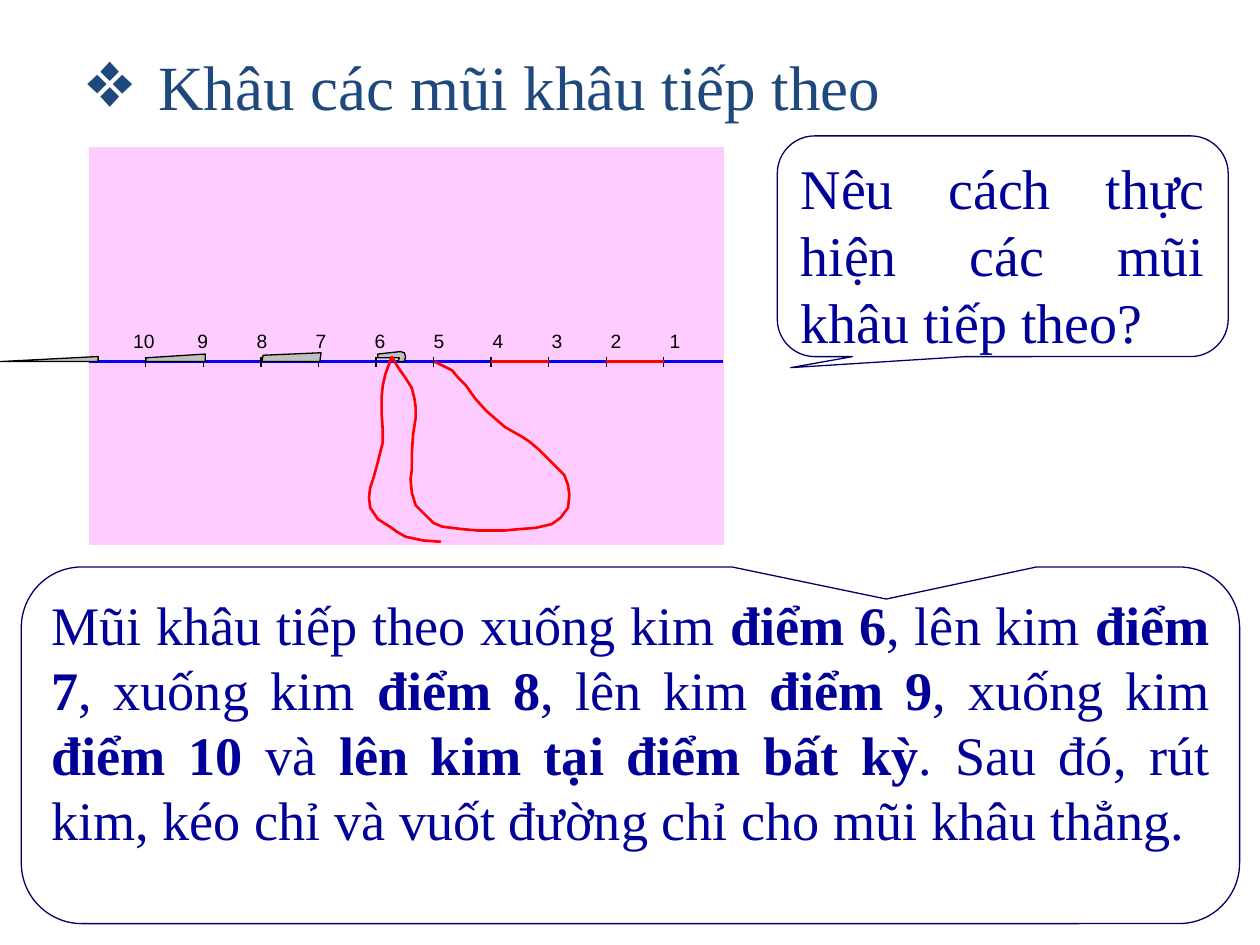
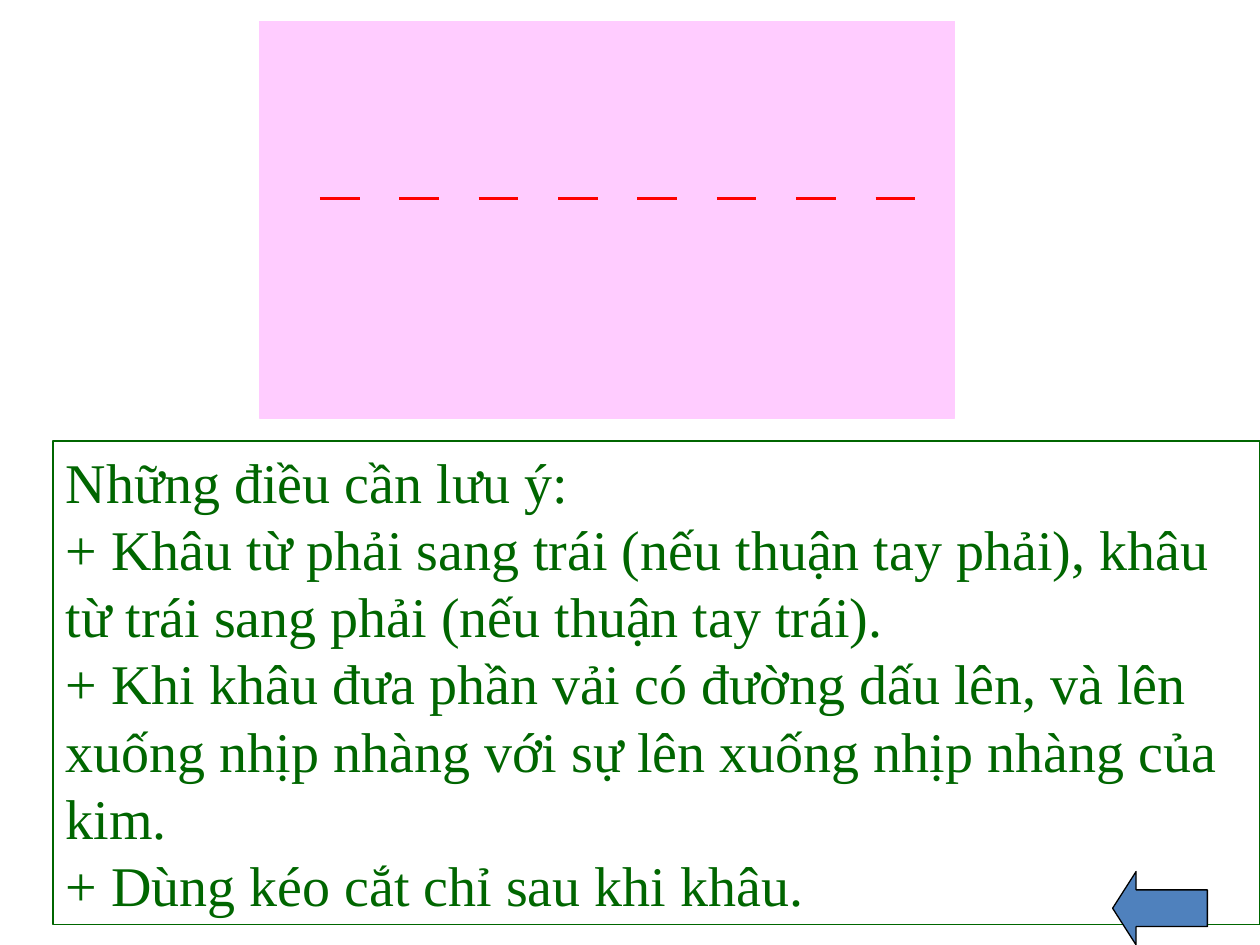
from lxml import etree
from pptx import Presentation
from pptx.dml.color import RGBColor
from pptx.enum.shapes import MSO_CONNECTOR, MSO_SHAPE
from pptx.enum.text import MSO_ANCHOR, MSO_AUTO_SIZE, PP_ALIGN
from pptx.oxml.ns import qn
from pptx.util import Cm, Pt

RECT = MSO_SHAPE.RECTANGLE
BUBBLE = MSO_SHAPE.ROUNDED_RECTANGULAR_CALLOUT
ARROW = MSO_SHAPE.LEFT_ARROW
LINE = MSO_CONNECTOR.STRAIGHT
TOP = MSO_ANCHOR.TOP
FIXED = MSO_AUTO_SIZE.NONE
LEFT = PP_ALIGN.LEFT
FULL = PP_ALIGN.JUSTIFY

SERIF, SANS = "Times New Roman", "Arial"
PINK, WHITE, BLACK, GREY = "FFCCFF", "FFFFFF", "000000", "C0C0C0"
RED, BLUE, NAVY, INK = "FF0000", "0000FF", "000066", "000099"
GREEN, STEEL, TITLE = "006600", "4F81BD", "1F497D"

UNIT = Cm(2.54) / 100
SEAM, FIRST, STEP = 4.32, 1.14, 1.16

NEEDLE = [
    [(7, 0), (-71, 0), (7, -4)],
    [(92, 0), (45, 0), (45, -3), (92, -6)],
    [(183, 0), (137, 0), (138, -5), (184, -7)],
    [(229, -3), (229, -6), (247, -8), (250, -7), (251, -4), (250, 0),
     (245, 0), (246, -3)],
]
THREAD = [
    [(240, -4), (238, 2), (235, 10), (233, 19), (232, 28), (232, 41),
     (233, 55), (233, 64), (231, 72), (229, 80), (226, 91), (223, 100),
     (222, 108), (223, 116), (229, 125), (240, 132), (244, 135),
     (251, 139), (265, 142), (279, 143)],
    [(240, -4), (246, 6), (251, 13), (256, 21), (258, 29), (259, 36),
     (259, 45), (257, 58), (256, 73), (256, 86), (255, 93), (256, 104),
     (259, 114), (264, 119), (273, 128), (280, 131), (296, 133),
     (308, 134), (330, 134), (341, 133), (354, 132), (367, 129),
     (374, 124), (380, 116), (381, 106), (380, 98), (377, 90), (372, 85),
     (364, 77), (357, 70), (350, 64), (344, 60), (330, 52), (315, 39),
     (306, 29), (299, 19), (293, 13), (288, 7), (274, 0)],
]

ASK = "Nêu cách thực hiện các mũi khâu tiếp theo?"
REPLY = (
    "Mũi khâu tiếp theo xuống kim *điểm 6*, lên kim *điểm 7*, xuống kim "
    "*điểm 8*, lên kim *điểm 9*, xuống kim *điểm 10* và *lên kim tại điểm "
    "bất kỳ*. Sau đó, rút kim, kéo chỉ và vuốt đường chỉ cho mũi khâu thẳng."
)
NOTES = [
    "Những điều cần lưu ý:",
    "+ Khâu từ phải sang trái (nếu thuận tay phải), khâu từ trái sang phải "
    "(nếu thuận tay trái).",
    "+ Khi khâu đưa phần vải có đường dấu lên, và lên xuống nhịp nhàng với "
    "sự lên xuống nhịp nhàng của kim.",
    "+ Dùng kéo cắt chỉ sau khi khâu.",
]


def color(code):
    return RGBColor.from_string(code)


def paint(shape, fill, line, width=0.75):
    shape.shadow.inherit = False
    if fill:
        shape.fill.solid()
        shape.fill.fore_color.rgb = color(fill)
    else:
        shape.fill.background()
    shape.line.color.rgb = color(line)
    shape.line.width = Pt(width)


def style(par, size, code, font=SERIF, align=LEFT):
    par.alignment = align
    for run in par.runs:
        run.font.size = Pt(size)
        run.font.name = font
        run.font.color.rgb = color(code)


def place(shape, box):
    shape.left, shape.top, shape.width, shape.height = map(Cm, box)


def setup(shape):
    frame = shape.text_frame
    frame.word_wrap = True
    frame.auto_size = FIXED
    frame.vertical_anchor = TOP
    return frame


def block(shapes, kind, box, fill, line):
    shape = shapes.add_shape(kind, *map(Cm, box))
    paint(shape, fill, line)
    return shape


def stroke(shapes, ends, code, width):
    line = shapes.add_connector(LINE, *map(Cm, ends))
    line.line.color.rgb = color(code)
    line.line.width = Pt(width)
    etree.SubElement(line.element.spPr, qn("a:effectLst"))


def trace(shapes, points, left, top, closed, fill, line, width):
    pen = shapes.build_freeform(*points[0], scale=UNIT)
    pen.add_line_segments(points[1:], close=closed)
    paint(pen.convert_to_shape(Cm(left), Cm(top)), fill, line, width)


def cloth(slide, box):
    shapes = slide.shapes.add_group_shape().shapes
    return shapes, block(shapes, RECT, box, PINK, PINK)


def label(panel):
    frame = setup(panel)
    frame.margin_left = frame.margin_right = 0
    frame.margin_top = Cm(3.66)
    par = frame.paragraphs[0]
    par.text = "".join(f"\t{num}" for num in range(10, 0, -1))
    style(par, 11, BLACK, SANS)
    tabs = etree.SubElement(par._p.get_or_add_pPr(), qn("a:tabLst"))
    for num in range(10):
        spot = Cm(1.1 + num * 1.19)
        etree.SubElement(tabs, qn("a:tab"), pos=str(spot), algn="ctr")


def seam(slide, box):
    shapes, panel = cloth(slide, box)
    label(panel)
    left, top, width, _ = box
    y = top + SEAM
    stroke(shapes, (left, y, left + width, y), BLUE, 1.5)
    ticks = [left + FIRST + num * STEP for num in range(10)]
    for x in ticks:
        stroke(shapes, (x, y + 0.1, x, y - 0.1), BLACK, 0.75)
    for part in NEEDLE:
        trace(shapes, part, left, y, True, GREY, BLACK, 0.75)
    for num in (8, 6):
        stroke(shapes, (ticks[num + 1], y, ticks[num], y), RED, 1.5)
    for loop in THREAD:
        trace(shapes, loop, left, y, False, None, RED, 1.5)


def dashes(slide, box):
    shapes, _ = cloth(slide, box)
    y = box[1] + 3.58
    for num in range(8):
        x = box[0] + 1.22 + num * 1.6
        stroke(shapes, (x, y, x + 0.8, y), RED, 1.75)


def bubble(slide, box, tip, text, size):
    shape = block(slide.shapes, BUBBLE, box, WHITE, NAVY)
    for num, value in enumerate(tip):
        shape.adjustments[num] = value
    par = setup(shape).paragraphs[0]
    for num, piece in enumerate(text.split("*")):
        run = par.add_run()
        run.text = piece
        run.font.bold = num % 2 == 1
    style(par, size, INK, align=FULL)


def head(slide, box, text):
    shape = slide.shapes.title
    place(shape, box)
    par = setup(shape).paragraphs[0]
    par.text = text
    style(par, 36, TITLE)
    props = par._p.get_or_add_pPr()
    props.set("marL", str(Cm(1.47)))
    props.set("indent", str(-Cm(1.47)))
    etree.SubElement(props, qn("a:buFont"), typeface=SERIF)
    etree.SubElement(props, qn("a:buChar"), char="❖")


def notes(slide, box):
    shape = slide.placeholders[1]
    place(shape, box)
    paint(shape, WHITE, GREEN)
    frame = setup(shape)
    frame.text = "\n".join(NOTES)
    for par in frame.paragraphs:
        style(par, 32, GREEN)
        par.space_before = Pt(0)
        props = par._p.get_or_add_pPr()
        props.set("marL", "0")
        props.set("indent", "0")
        etree.SubElement(props, qn("a:buNone"))


def steps(deck):
    slide = deck.slides.add_slide(deck.slide_layouts[5])
    head(slide, (1.47, 0.84, 17.35, 1.78), "Khâu các mũi khâu tiếp theo")
    seam(slide, (1.8, 2.97, 12.78, 8))
    bubble(slide, (15.67, 2.74, 9.09, 4.45), (-0.47, 0.55, 0.17), ASK, 32)
    bubble(slide, (0.43, 11.43, 24.56, 7.19), (0.21, -0.41, 0.17), REPLY, 31)


def advice(deck):
    slide = deck.slides.add_slide(deck.slide_layouts[1])
    title = slide.shapes.title.element
    title.getparent().remove(title)
    dashes(slide, (5.23, 0.43, 14.02, 8))
    notes(slide, (1.07, 8.89, 24.33, 9.75))
    back = block(slide.shapes, ARROW, (22.43, 17.57, 1.91, 1.48), STEEL, BLACK)
    back.adjustments[1] = 0.32


def main():
    deck = Presentation()
    deck.slide_width, deck.slide_height = Cm(25.4), Cm(19.05)
    steps(deck)
    advice(deck)
    deck.save("out.pptx")


if __name__ == "__main__":
    main()
